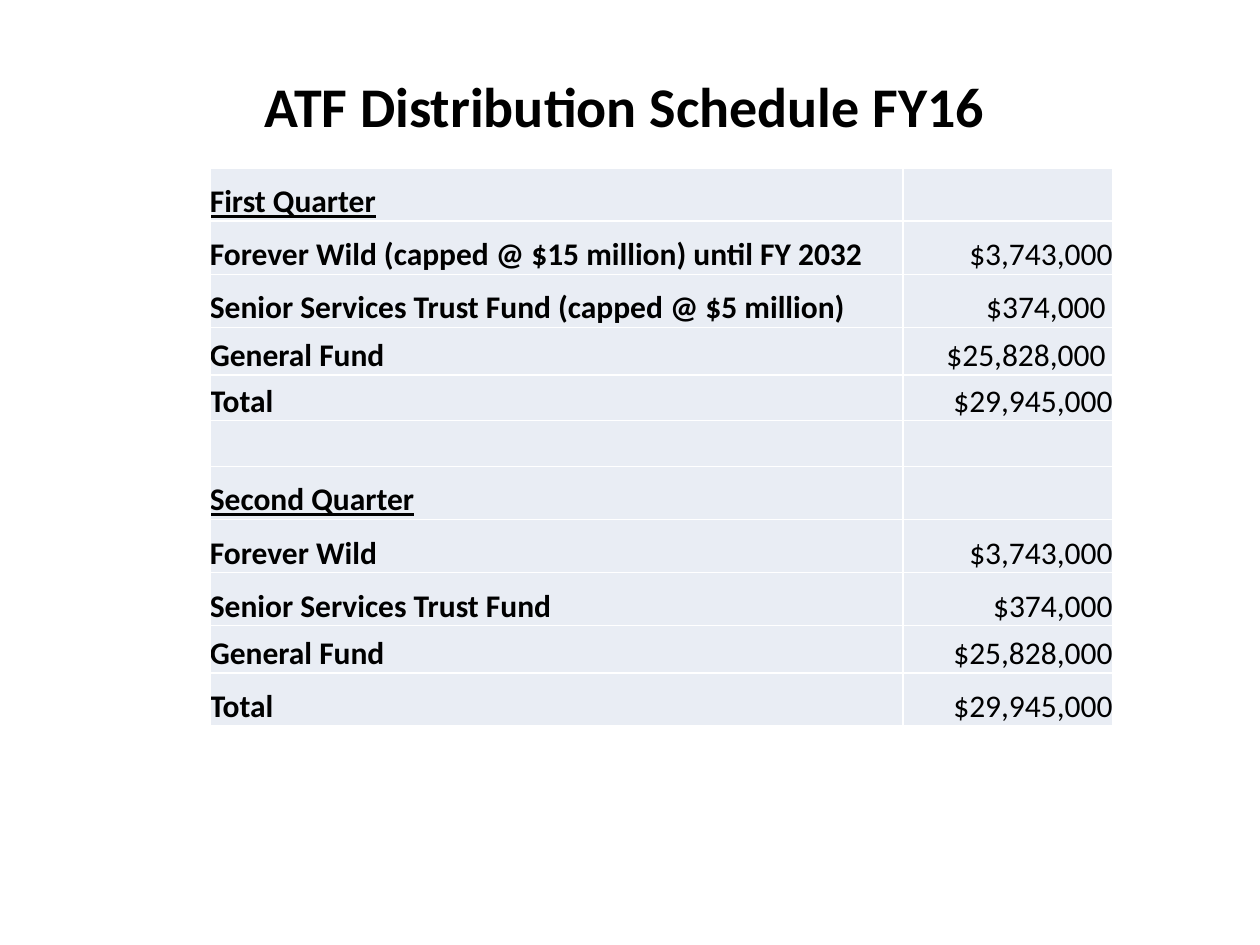
from dataclasses import dataclass

from lxml.etree import SubElement
from pptx import Presentation
from pptx.dml.color import RGBColor
from pptx.enum.text import MSO_ANCHOR as Anchor, PP_ALIGN as Align
from pptx.oxml.ns import qn
from pptx.util import Cm, Pt


@dataclass(frozen=True)
class Theme:
    font: str = "Calibri"
    ink: str = "000000"
    band: str = "E9EDF4"
    rule: str = "FFFFFF"
    rule_width: float = 1
    title_size: float = 32
    body_size: float = 18


@dataclass(frozen=True)
class Entry:
    label: str = ""
    amount: str = ""
    height: float = 1.07
    heading: bool = False
    indent: float = 0


class SlideBuilder:
    def __init__(self, slide, theme):
        self.slide = slide
        self.theme = theme

    def format_text(self, frame, size, align, bold=False, underline=False):
        for paragraph in frame.paragraphs:
            paragraph.alignment = align
            for run in paragraph.runs:
                run.font.name = self.theme.font
                run.font.size = Pt(size)
                run.font.bold = bold
                run.font.underline = underline
                run.font.color.rgb = RGBColor.from_string(self.theme.ink)

    def title(self, wording, left, top, width, height):
        heading = self.slide.shapes.add_textbox(Cm(left), Cm(top), Cm(width), Cm(height))
        frame = heading.text_frame
        frame.word_wrap = True
        frame.vertical_anchor = Anchor.MIDDLE
        frame.text = wording
        self.format_text(frame, self.theme.title_size, Align.CENTER, bold=True)

    def borders(self, cell):
        properties = cell._tc.get_or_add_tcPr()
        for side in ("lnL", "lnR", "lnT", "lnB"):
            line = SubElement(properties, qn(f"a:{side}"), w=str(Pt(self.theme.rule_width)))
            paint = SubElement(line, qn("a:solidFill"))
            SubElement(paint, qn("a:srgbClr"), val=self.theme.rule)

    def cell(self, cell, wording, align, right_margin=0, **emphasis):
        self.borders(cell)
        cell.fill.solid()
        cell.fill.fore_color.rgb = RGBColor.from_string(self.theme.band)
        cell.margin_left = cell.margin_top = cell.margin_bottom = 0
        cell.margin_right = Cm(right_margin)
        cell.vertical_anchor = Anchor.BOTTOM
        if wording:
            cell.text_frame.text = wording
            self.format_text(cell.text_frame, self.theme.body_size, align, **emphasis)

    def schedule(self, entries, left, top, widths):
        total_height = sum(entry.height for entry in entries)
        schedule = self.slide.shapes.add_table(
            len(entries), len(widths), Cm(left), Cm(top), Cm(sum(widths)), Cm(total_height)
        ).table
        schedule.first_row = schedule.horz_banding = False
        for column, width in zip(schedule.columns, widths):
            column.width = Cm(width)
        for row, entry in zip(schedule.rows, entries):
            row.height = Cm(entry.height)
            label, amount = row.cells
            self.cell(label, entry.label, Align.LEFT, bold=True, underline=entry.heading)
            self.cell(amount, entry.amount, Align.RIGHT, entry.indent)


ENTRIES = [
    Entry("First Quarter", heading=True),
    Entry("Forever Wild (capped @ $15 million) until FY 2032", "$3,743,000"),
    Entry("Senior Services Trust Fund (capped @ $5 million)", "$374,000", indent=0.14),
    Entry("General Fund", "$25,828,000", height=0.96, indent=0.14),
    Entry("Total", "$29,945,000", height=0.92),
    Entry(height=0.92),
    Entry("Second Quarter", heading=True),
    Entry("Forever Wild", "$3,743,000"),
    Entry("Senior Services Trust Fund", "$374,000"),
    Entry("General Fund", "$25,828,000", height=0.96),
    Entry("Total", "$29,945,000"),
]


def main():
    deck = Presentation()
    deck.slide_width, deck.slide_height = Cm(25.4), Cm(19.05)
    builder = SlideBuilder(deck.slides.add_slide(deck.slide_layouts[6]), Theme())
    builder.title("ATF Distribution Schedule FY16", 2.33, 1.27, 20.53, 1.7)
    builder.schedule(ENTRIES, 4.23, 3.39, (13.97, 4.23))
    deck.save("out.pptx")


if __name__ == "__main__":
    main()
